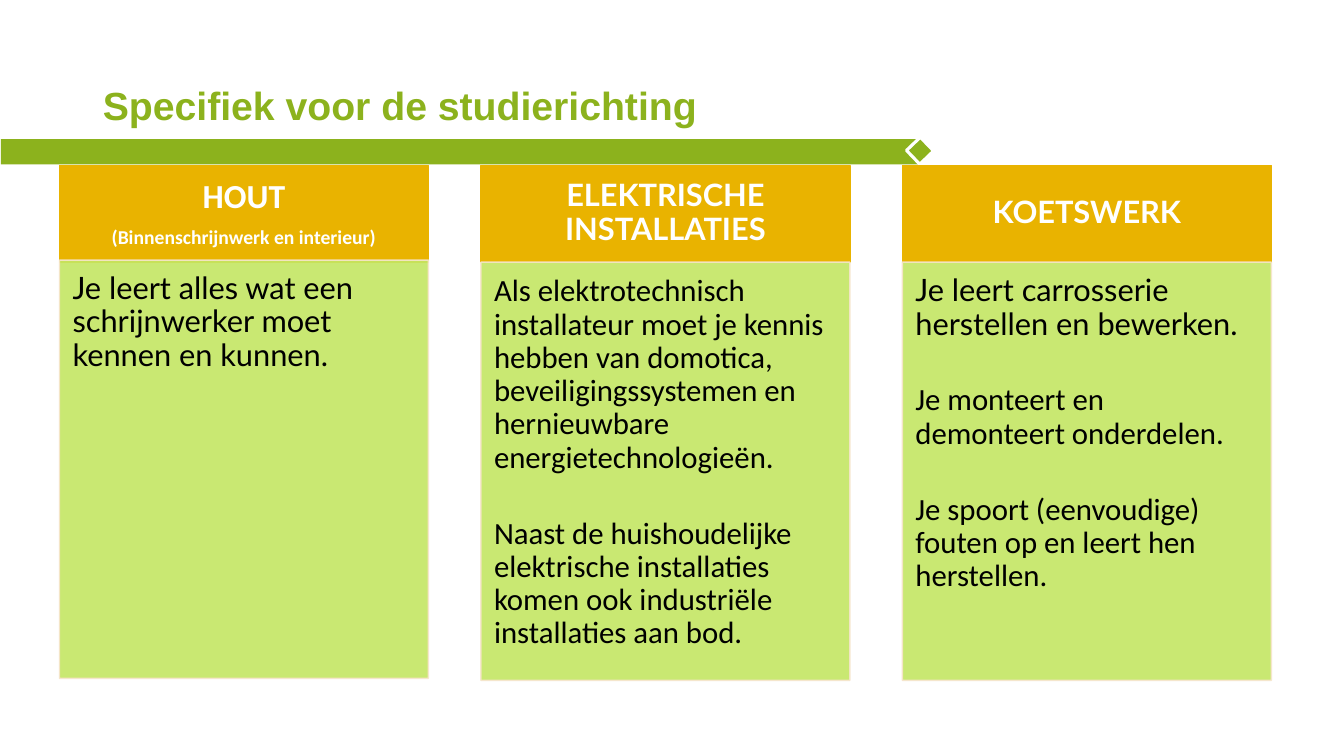
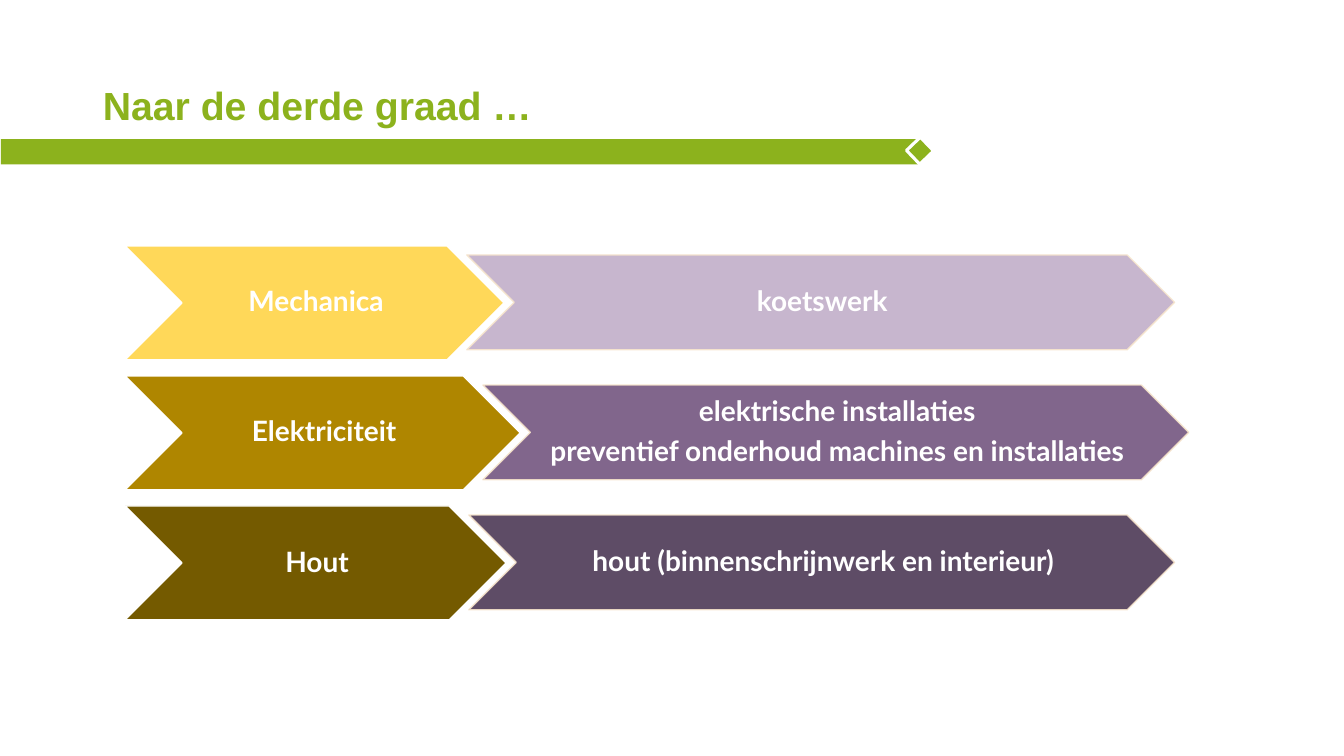
from lxml import etree
from pptx import Presentation
from pptx.dml.color import RGBColor
from pptx.enum import shapes, text
from pptx.oxml import ns
from pptx.util import Inches, Pt

GREEN, GOLD, LIME = "8CB21D", "E9B300", "C4E663"
WHITE, BLACK, CREAM = "FFFFFF", "000000", "F7E5CC"
RECTANGLE = shapes.MSO_SHAPE.RECTANGLE
CHEVRON = shapes.MSO_SHAPE.CHEVRON


def paint(fill, color, opacity=100):
    """Give a fill a solid colour, see-through when opacity is below 100."""
    fill.solid()
    fill.fore_color.rgb = RGBColor.from_string(color)
    if opacity < 100:
        solid = fill._xPr.find(ns.qn("a:solidFill"))
        alpha = etree.SubElement(solid[0], ns.qn("a:alpha"))
        alpha.set("val", str(opacity * 1000))


class Deck:
    def __init__(self):
        self.deck = Presentation()
        self.deck.slide_width = Inches(13.33)
        self.deck.slide_height = Inches(7.5)
        self.page = None

    def new_page(self, title):
        """Start a slide with the shared band, diamond and title."""
        self.page = self.deck.slides.add_slide(self.deck.slide_layouts[5])
        self.shape(RECTANGLE, 0.01, 1.38, 9.11, 0.25, GREEN)
        diamond = self.shape(RECTANGLE, 9.03, 1.4, 0.19, 0.19, GREEN, WHITE, 2.25)
        diamond.rotation = 46.2
        box = self.page.shapes.title
        box.left, box.top = Inches(0.92), Inches(0.34)
        box.width, box.height = Inches(10.08), Inches(1.45)
        self.set_text(box, [(title, 28, "Arial")], GREEN, bold=True,
                      align=text.PP_ALIGN.LEFT)

    def shape(self, kind, left, top, width, height, fill, line=None,
              weight=1, opacity=100):
        box = self.page.shapes.add_shape(
            kind, Inches(left), Inches(top), Inches(width), Inches(height))
        box.shadow.inherit = False
        paint(box.fill, fill, opacity)
        if line:
            paint(box.line.fill, line, opacity)
            box.line.width = Pt(weight)
        else:
            box.line.fill.background()
        return box

    def set_text(self, box, lines, color, bold=False, gap=0, insets=None,
                 align=text.PP_ALIGN.CENTER, anchor=text.MSO_ANCHOR.MIDDLE):
        """Fill a box with (words, size, font) lines, gap points apart."""
        frame = box.text_frame
        frame.word_wrap = True
        frame.vertical_anchor = anchor
        if insets:
            (frame.margin_left, frame.margin_top, frame.margin_right,
             frame.margin_bottom) = map(Inches, insets)
        for number, (words, size, font) in enumerate(lines):
            para = frame.add_paragraph() if number else frame.paragraphs[0]
            para.text = words
            para.alignment = align
            para.line_spacing = 0.9
            para.space_before = Pt(gap if number else 0)
            para.font.size = Pt(size)
            para.font.name = font
            para.font.bold = bold
            para.font.color.rgb = RGBColor.from_string(color)

    def column(self, left, body_top, heading, body):
        header = self.shape(RECTANGLE, left, 1.64, 3.66, 0.96, GOLD, GOLD)
        self.set_text(header, heading, WHITE, bold=True, gap=8.4,
                      insets=(0.17, 0.1, 0.17, 0.1))
        panel = self.shape(RECTANGLE, left, body_top, 3.66, 4.15, LIME, CREAM,
                           opacity=90)
        self.set_text(panel, body, BLACK, gap=30.5,
                      insets=(0.13, 0.13, 0.17, 0.19),
                      align=text.PP_ALIGN.LEFT, anchor=text.MSO_ANCHOR.TOP)

    def chevron(self, left, top, width, height, fill, line, lines, opacity=100):
        arrow = self.shape(CHEVRON, left, top, width, height, fill, line,
                           opacity=opacity)
        self.set_text(arrow, [(words, 20, "Lato") for words in lines], WHITE,
                      bold=True, gap=7, insets=(0.03, 0.01, 0, 0.01))

    def save(self):
        self.deck.save("out.pptx")


def main():
    deck = Deck()

    # Three fields of study: body top, heading lines, body lines
    deck.new_page("Specifiek voor de studierichting")
    columns = [
        (2.58,
         [("HOUT", 24, "Calibri"),
          ("(Binnenschrijnwerk en interieur)", 14, "Calibri")],
         [("Je leert alles wat een schrijnwerker moet kennen en kunnen.",
           22, "Lato")]),
        (2.6,
         [("ELEKTRISCHE INSTALLATIES", 22, "Lato")],
         [("Als elektrotechnisch installateur moet je kennis hebben van "
           "domotica, beveiligingssystemen en hernieuwbare "
           "energietechnologieën.", 22, "Calibri"),
          ("Naast de huishoudelijke elektrische installaties komen ook "
           "industriële installaties aan bod.", 22, "Calibri")]),
        (2.6,
         [("KOETSWERK", 22, "Lato")],
         [("Je leert carrosserie herstellen en bewerken.", 22, "Lato"),
          ("Je monteert en demonteert onderdelen.", 22, "Calibri"),
          ("Je spoort (eenvoudige) fouten op en leert hen herstellen.",
           22, "Calibri")]),
    ]
    for number, (body_top, heading, body) in enumerate(columns):
        deck.column(0.59 + 4.18 * number, body_top, heading, body)

    # Fields of the second grade and where they lead
    deck.new_page("Naar de derde graad …")
    routes = [
        ("Mechanica", 3.76, "FFD859", ["koetswerk"], 7.02, "C1AFC9"),
        ("Elektriciteit", 3.92, "AF8600",
         ["elektrische installaties",
          "preventief onderhoud machines en installaties"], 7, "745680"),
        ("Hout", 3.78, "745A00",
         ["hout (binnenschrijnwerk en interieur)"], 7, "4D3956"),
    ]
    left, overlap = 1.24, 0.37
    for number, (field, width, color, goals, reach, tint) in enumerate(routes):
        top = 2.44 + 1.29 * number
        deck.chevron(left, top, width, 1.13, color, WHITE, [field])
        deck.chevron(left + width - overlap, top + 0.09, reach, 0.94, tint,
                     CREAM, goals, opacity=90)

    deck.save()


if __name__ == "__main__":
    main()
